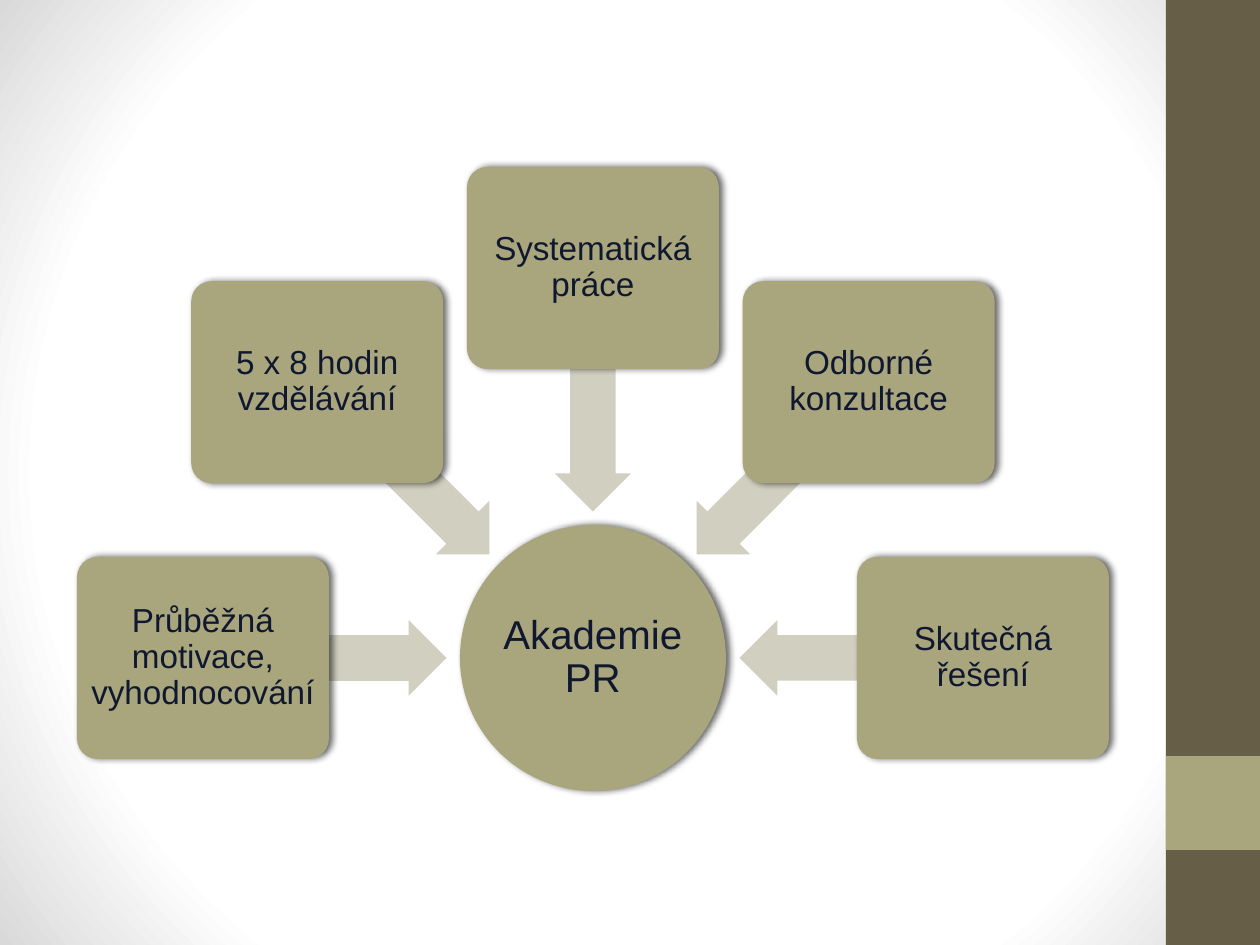
from math import cos, radians, sin

from pptx import Presentation
from pptx.dml.color import RGBColor
from pptx.enum.shapes import MSO_SHAPE
from pptx.enum.text import MSO_ANCHOR, PP_ALIGN
from pptx.oxml import parse_xml
from pptx.oxml.ns import nsdecls
from pptx.util import Emu, Pt

PX_PER_INCH = 126
COLORS = {
    "band": "675E47", "accent": "A9A57C", "arrow": "D1CFBF", "text": "0F182F",
    "shadow": "000000", "white": "FFFFFF", "edge": "D9D9D9",
}
CARDS = [
    "Průběžná motivace, vyhodnocování",
    "5 x 8 hodin vzdělávání",
    "Systematická práce",
    "Odborné konzultace",
    "Skutečná řešení",
]


def px(n):
    return Emu(round(n * 914400 / PX_PER_INCH))


def add_box(s, kind, x, y, w, h, color):
    sp = s.shapes.add_shape(kind, px(x), px(y), px(w), px(h))
    sp.shadow.inherit = False
    sp.fill.solid()
    sp.fill.fore_color.rgb = RGBColor.from_string(COLORS[color])
    sp.line.fill.background()
    return sp


def add_centered(s, kind, cx, cy, w, h, color):
    return add_box(s, kind, cx - w / 2, cy - h / 2, w, h, color)


def add_shadow(sp):
    effects = sp.element.spPr.find("{*}effectLst")
    effects.append(parse_xml(
        f'<a:outerShdw {nsdecls("a")} blurRad="{Pt(4)}" dist="{Pt(2)}" dir="0" rotWithShape="0">'
        f'<a:srgbClr val="{COLORS["shadow"]}"><a:alpha val="60000"/></a:srgbClr></a:outerShdw>'))


def set_label(sp, text, size, inset):
    tf = sp.text_frame
    tf.word_wrap = True
    tf.vertical_anchor = MSO_ANCHOR.MIDDLE
    tf.margin_left = tf.margin_right = tf.margin_top = tf.margin_bottom = px(inset)
    tf.text = text
    p = tf.paragraphs[0]
    p.alignment = PP_ALIGN.CENTER
    p.line_spacing = 0.9
    font = p.runs[0].font
    font.name = "Arial"
    font.size = Pt(size)
    font.color.rgb = RGBColor.from_string(COLORS["text"])


def add_background(s):
    stops = "".join(
        f'<a:gs pos="{pos}000"><a:srgbClr val="{COLORS[color]}"/></a:gs>'
        for pos, color in [(0, "white"), (75, "white"), (100, "edge")])
    s.element.cSld.insert(0, parse_xml(
        f'<p:bg {nsdecls("p", "a")}><p:bgPr><a:gradFill rotWithShape="1">'
        f'<a:gsLst>{stops}</a:gsLst><a:path path="circle">'
        '<a:fillToRect l="50000" t="50000" r="50000" b="50000"/></a:path>'
        '</a:gradFill><a:effectLst/></p:bgPr></p:bg>'))


def add_side_band(s, x, y, w, h):
    add_box(s, MSO_SHAPE.RECTANGLE, x, y, w, h, "band")
    add_box(s, MSO_SHAPE.RECTANGLE, x, y + h * 0.8, w, w, "accent")


def add_radial(s, x, y, w, h):
    hub_d, card_w, card_h = 266, 252, 202
    cx, cy = x + w / 2, y + h - hub_d / 2
    card_r, arrow_r = (w - card_w) / 2, 268

    # Hub
    hub = add_centered(s, MSO_SHAPE.OVAL, cx, cy, hub_d, hub_d, "accent")
    add_shadow(hub)
    set_label(hub, "Akademie PR", 23, 3)

    # Cards on a half circle, each with an arrow towards the hub
    for i, text in enumerate(CARDS):
        angle = 180 + i * 180 / (len(CARDS) - 1)
        dx, dy = cos(radians(angle)), sin(radians(angle))
        arrow = add_centered(s, MSO_SHAPE.LEFT_ARROW, cx + arrow_r * dx, cy + arrow_r * dy,
                             243, 76, "arrow")
        arrow.adjustments[0] = 0.6
        arrow.adjustments[1] = 0.5
        arrow.rotation = angle % 360
        card = add_centered(s, MSO_SHAPE.ROUNDED_RECTANGLE, cx + card_r * dx, cy + card_r * dy,
                            card_w, card_h, "accent")
        card.adjustments[0] = 0.1
        add_shadow(card)
        set_label(card, text, 19, 5)


def main():
    prs = Presentation()
    prs.slide_width, prs.slide_height = px(1260), px(945)
    s = prs.slides.add_slide(prs.slide_layouts[6])
    add_background(s)
    add_side_band(s, 1166, 0, 94, 945)
    add_radial(s, 77, 167, 1032, 624)
    prs.save("out.pptx")


if __name__ == "__main__":
    main()
